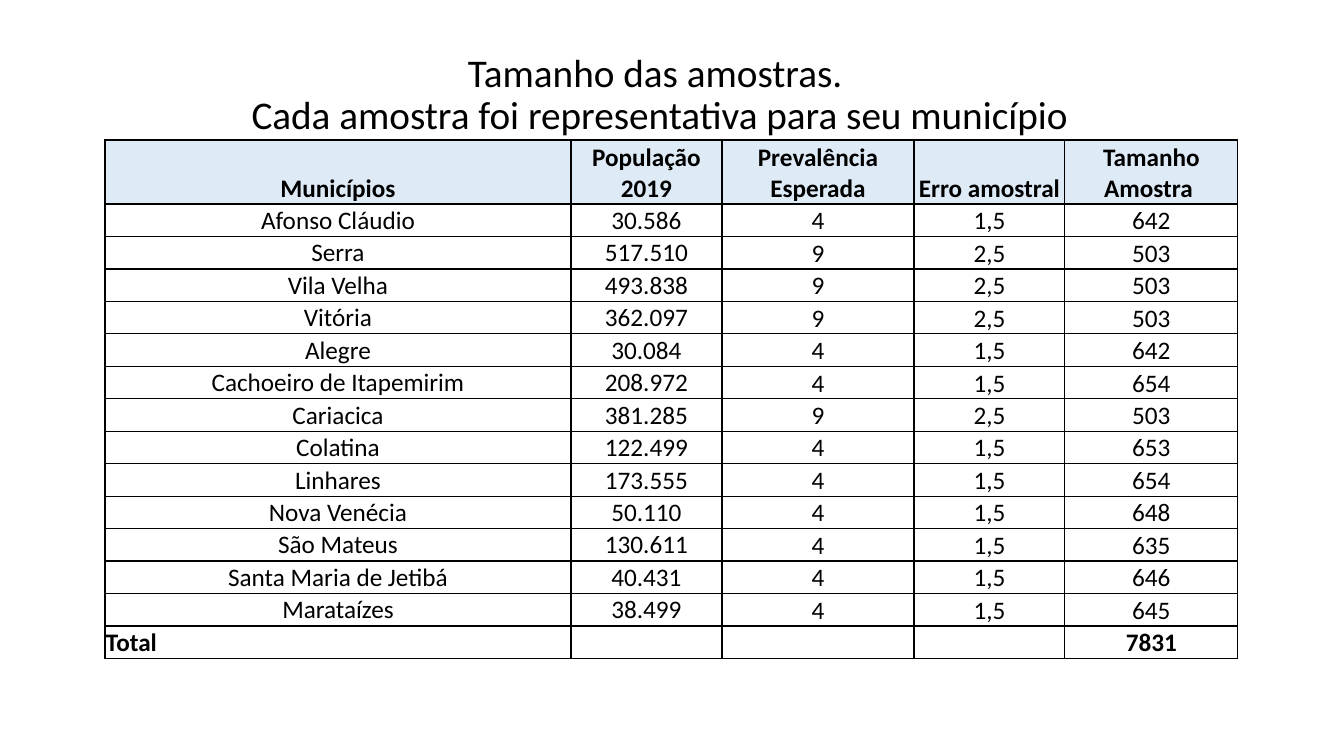
import lxml.etree
import pptx
import pptx.dml.color
import pptx.enum.text
import pptx.oxml.ns
import pptx.util

ANCHOR = pptx.enum.text.MSO_ANCHOR
ALIGN = pptx.enum.text.PP_ALIGN
SCALE = 914400 / 100.8

HEAD = ["Municípios", "População 2019", "Prevalência Esperada",
        "Erro amostral", "Tamanho Amostra "]
CITIES = [
    ["Afonso Cláudio", "30.586", "4", "1,5", "642"],
    ["Serra", "517.510", "9", "2,5", "503"],
    ["Vila Velha", "493.838", "9", "2,5", "503"],
    ["Vitória", "362.097", "9", "2,5", "503"],
    ["Alegre", "30.084", "4", "1,5", "642"],
    ["Cachoeiro de Itapemirim", "208.972", "4", "1,5", "654"],
    ["Cariacica", "381.285", "9", "2,5", "503"],
    ["Colatina", "122.499", "4", "1,5", "653"],
    ["Linhares", "173.555", "4", "1,5", "654"],
    ["Nova Venécia", "50.110", "4", "1,5", "648"],
    ["São Mateus", "130.611", "4", "1,5", "635"],
    ["Santa Maria de Jetibá", "40.431", "4", "1,5", "646"],
    ["Marataízes", "38.499", "4", "1,5", "645"],
]
TOTAL = ["Total", "", "", "", "7831"]


def px(count):
    return pptx.util.Emu(round(count * SCALE))


def color(code):
    return pptx.dml.color.RGBColor.from_string(code)


class Deck:
    font = "Calibri"
    ink = "000000"
    tint = "DEEBF7"

    def __init__(self):
        self.file = pptx.Presentation()
        self.file.slide_width, self.file.slide_height = px(1344), px(756)
        self.slide = self.file.slides.add_slide(self.file.slide_layouts[5])

    def style(self, font, size, bold=False):
        font.name, font.size, font.bold = self.font, pptx.util.Pt(size), bold
        font.color.rgb = color(self.ink)

    def title(self, lines, left, top, width, height):
        shape = self.slide.shapes.title
        shape.left, shape.top = px(left), px(top)
        shape.width, shape.height = px(width), px(height)
        frame = shape.text_frame
        frame.auto_size = pptx.enum.text.MSO_AUTO_SIZE.NONE
        frame.vertical_anchor = ANCHOR.MIDDLE
        para = frame.paragraphs[0]
        para.alignment, para.line_spacing = ALIGN.CENTER, 0.9
        for order, line in enumerate(lines):
            if order:
                para.add_line_break()
            run = para.add_run()
            run.text = line
            self.style(run.font, 28)

    def border(self, cell):
        """Draw a thin line on all four sides; lines go before the fill."""
        props = cell._tc.get_or_add_tcPr()
        qn = pptx.oxml.ns.qn
        for order, side in enumerate("LRTB"):
            line = lxml.etree.Element(qn("a:ln" + side), w="12700")
            fill = lxml.etree.SubElement(line, qn("a:solidFill"))
            lxml.etree.SubElement(fill, qn("a:srgbClr"), val=self.ink)
            props.insert(order, line)

    def cell(self, cell, text, bold, align, anchor, fill):
        cell.margin_left = cell.margin_right = cell.margin_top = px(1)
        cell.margin_bottom = 0
        cell.vertical_anchor = anchor
        if fill:
            cell.fill.solid()
            cell.fill.fore_color.rgb = color(fill)
        else:
            cell.fill.background()
        self.border(cell)
        para = cell.text_frame.paragraphs[0]
        para.alignment = align
        if text:
            run = para.add_run()
            run.text = text
            self.style(run.font, 18, bold)
        else:
            self.style(para.font, 18)

    def table(self, rows, left, top, widths, first, height):
        """Lay out a header row of height first, the other rows equal."""
        frame = self.slide.shapes.add_table(
            len(rows), len(widths), px(left), px(top),
            px(sum(widths)), px(height))
        table = frame.table
        table.first_row = table.horz_banding = False
        for col, width in zip(table.columns, widths):
            col.width = px(width)
        last = len(rows) - 1
        for r, texts in enumerate(rows):
            table.rows[r].height = px((height - first) / last if r else first)
            for c, text in enumerate(texts):
                self.cell(
                    table.cell(r, c), text, r in (0, last),
                    ALIGN.LEFT if r == last and c == 0 else ALIGN.CENTER,
                    ANCHOR.MIDDLE if r and c < 2 else ANCHOR.BOTTOM,
                    None if r else self.tint)


def main():
    deck = Deck()
    deck.title(["Tamanho das amostras. ",
                "Cada amostra foi representativa para seu município"],
               80, 23, 1159, 146)
    deck.table([HEAD, *CITIES, TOTAL], 105, 140,
               [466, 151, 192, 151, 173], 64, 519)
    deck.file.save("out.pptx")


if __name__ == "__main__":
    main()
